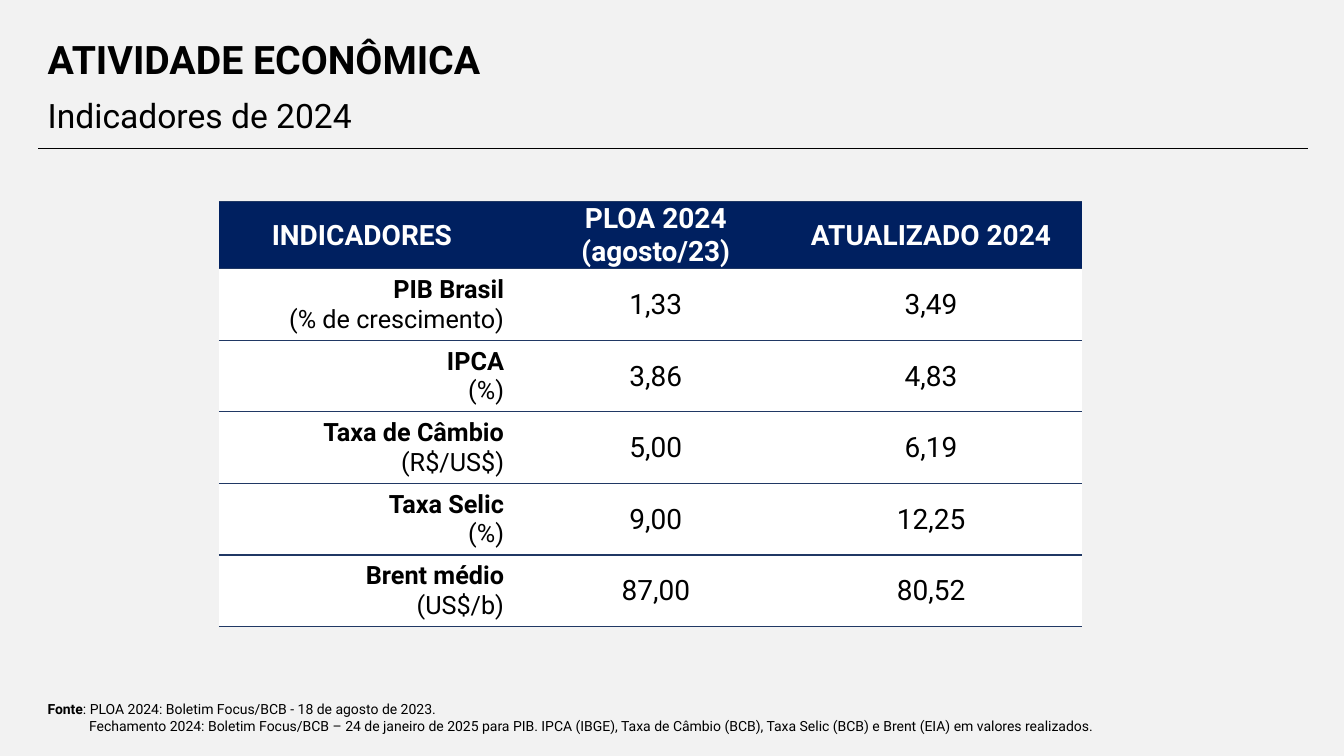
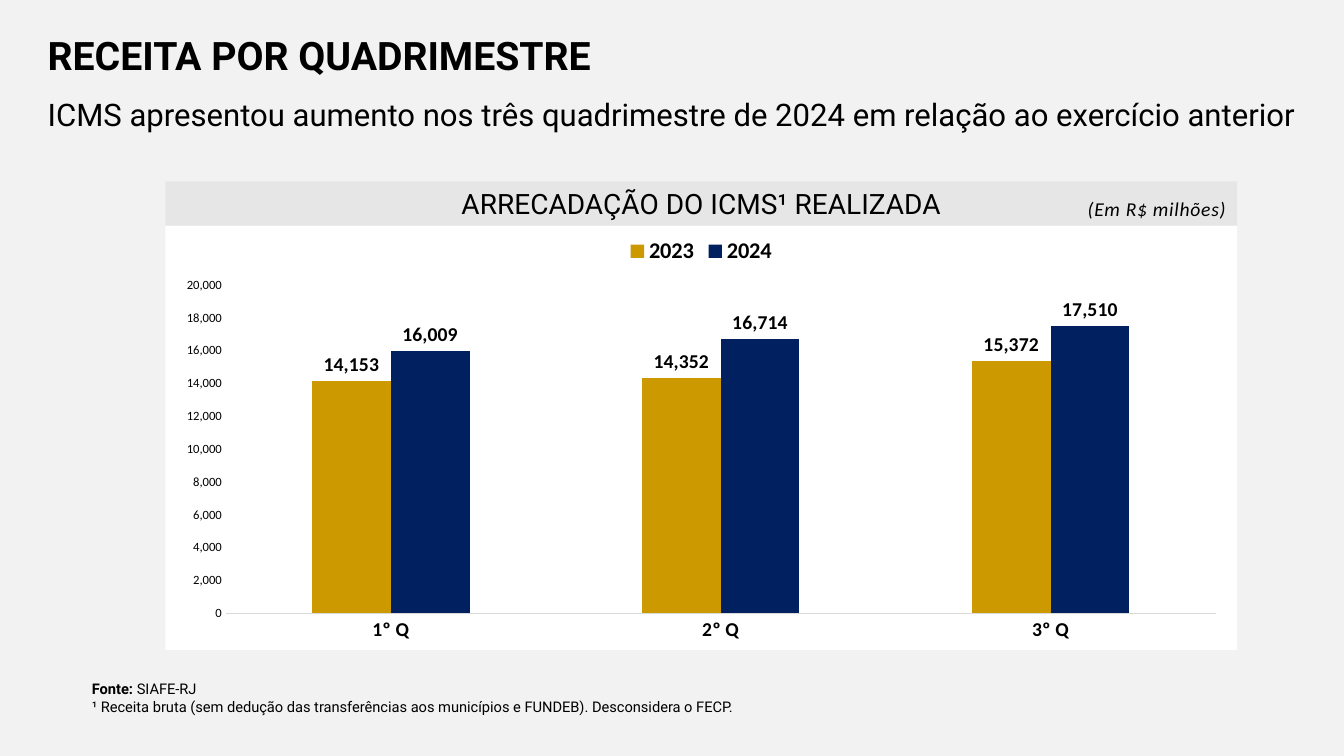
from dataclasses import dataclass
from typing import Optional

from lxml.etree import SubElement
from pptx import Presentation
from pptx.chart.data import CategoryChartData
from pptx.dml.color import RGBColor
from pptx.enum.chart import XL_CHART_TYPE as ChartType
from pptx.enum.chart import XL_LABEL_POSITION as LabelPosition
from pptx.enum.chart import XL_LEGEND_POSITION as LegendPosition
from pptx.enum.chart import XL_TICK_MARK as TickMark
from pptx.enum.shapes import MSO_CONNECTOR as Connector
from pptx.enum.shapes import MSO_SHAPE as Preset
from pptx.enum.text import MSO_ANCHOR as Anchor
from pptx.enum.text import MSO_AUTO_SIZE as AutoSize
from pptx.enum.text import PP_ALIGN as Align
from pptx.oxml.ns import qn
from pptx.util import Inches, Pt

SLIDE_W, SLIDE_H = Inches(13.33), Inches(7.5)
PAPER, BLACK, WHITE = "F2F2F2", "000000", "FFFFFF"
NAVY, RULE_BLUE, GOLD = "002060", "203864", "CC9900"
BAND_GREY, AXIS_GREY = "E7E6E6", "D9D9D9"
HEADING_FONT, CHART_FONT = "Roboto", "Calibri"
MARGIN = 2.8
MILLIONS = "#,##0,,"


@dataclass(frozen=True)
class Area:
    """Percentages of the slide's width and height."""

    left: float
    top: float
    width: float
    height: float

    def emu(self) -> tuple:
        return across(self.left), down(self.top), across(self.width), down(self.height)


@dataclass(frozen=True)
class SourceLine:
    lead: str
    rest: str
    indent: float = 0


@dataclass(frozen=True)
class Indicator:
    name: str
    unit: str
    planned: str
    updated: str


@dataclass(frozen=True)
class YearRevenue:
    year: str
    millions: tuple
    colour: str


INDICATORS = (
    Indicator("PIB Brasil", "(% de crescimento)", "1,33", "3,49"),
    Indicator("IPCA", "(%)", "3,86", "4,83"),
    Indicator("Taxa de Câmbio", "(R$/US$)", "5,00", "6,19"),
    Indicator("Taxa Selic", "(%)", "9,00", "12,25"),
    Indicator("Brent médio", "(US$/b)", "87,00", "80,52"),
)
INDICATOR_HEADINGS = ("INDICADORES", "", "PLOA 2024\n(agosto/23)", "ATUALIZADO 2024", "")
INDICATOR_COLUMNS = (21.3, 1.28, 19.88, 21.08, 0.68)
HEADING_ROW, INDICATOR_ROW = 8.8, 9.47

QUARTERS = ("1º Q", "2º Q", "3º Q")
REVENUES = (
    YearRevenue("2023", (14153, 14352, 15372), GOLD),
    YearRevenue("2024", (16009, 16714, 17510), NAVY),
)


def across(share: float) -> int:
    return round(SLIDE_W * share / 100)


def down(share: float) -> int:
    return round(SLIDE_H * share / 100)


def colour(value: str) -> RGBColor:
    return RGBColor.from_string(value)


def style(font, size: float, bold: bool = False, face: str = HEADING_FONT,
          ink: str = BLACK) -> None:
    font.name, font.size, font.bold = face, Pt(size), bold
    font.color.rgb = colour(ink)


def style_paragraph(paragraph, size: float, bold: bool = False,
                    align: Align = Align.LEFT, spacing: Optional[float] = None,
                    ink: str = BLACK, face: str = HEADING_FONT) -> None:
    paragraph.alignment = align
    if spacing:
        paragraph.line_spacing = spacing
    for run in paragraph.runs:
        style(run.font, size, bold, face, ink)


def fill_heading(placeholder, area: Area, text: str, size: float, bold: bool,
                 spacing: float) -> None:
    placeholder.left, placeholder.top, placeholder.width, placeholder.height = area.emu()
    frame = placeholder.text_frame
    frame.text = text
    frame.auto_size = AutoSize.NONE
    frame.word_wrap = True
    frame.vertical_anchor = Anchor.MIDDLE
    paragraph = frame.paragraphs[0]
    properties = paragraph._p.get_or_add_pPr()
    properties.set("marL", "0")
    properties.set("indent", "0")
    SubElement(properties, qn("a:buNone"))
    paragraph.space_before = Pt(0)
    style_paragraph(paragraph, size, bold, spacing=spacing)


def add_headed_slide(deck, title: str, subtitle: str, title_top: float,
                     subtitle_size: float):
    slide = deck.slides.add_slide(deck.slide_layouts[1])
    fill_heading(slide.shapes.title, Area(MARGIN, title_top, 66.7, 10.5),
                 title, 28, True, 0.9)
    fill_heading(slide.placeholders[1], Area(MARGIN, 10.7, 95.5, 7.9),
                 subtitle, subtitle_size, False, 1.2)
    return slide


def add_source(slide, area: Area, lines: tuple, size: float) -> None:
    frame = slide.shapes.add_textbox(*area.emu()).text_frame
    frame.word_wrap = True
    for position, line in enumerate(lines):
        paragraph = frame.add_paragraph() if position else frame.paragraphs[0]
        paragraph.text = line.lead
        style_paragraph(paragraph, size, True)
        rest = paragraph.add_run()
        rest.text = line.rest
        style(rest.font, size)
        if line.indent:
            paragraph._p.get_or_add_pPr().set("marL", str(across(line.indent)))


def add_panel(slide, area: Area, fill: str):
    panel = slide.shapes.add_shape(Preset.RECTANGLE, *area.emu())
    panel.shadow.inherit = False
    panel.fill.solid()
    panel.fill.fore_color.rgb = colour(fill)
    panel.line.fill.background()
    return panel


def add_rule(slide, left: float, right: float, top: float) -> None:
    rule = slide.shapes.add_connector(Connector.STRAIGHT, across(left), down(top),
                                      across(right), down(top))
    rule.line.color.rgb = colour(BLACK)
    rule.line.width = Pt(0.5)
    SubElement(rule._element.spPr, qn("a:effectLst"))


def add_borders(cell) -> None:
    properties = cell._tc.get_or_add_tcPr()
    for side in ("lnL", "lnR"):
        SubElement(SubElement(properties, qn(f"a:{side}"), w="0"), qn("a:noFill"))
    for side in ("lnT", "lnB"):
        edge = SubElement(properties, qn(f"a:{side}"), w=str(Pt(1)))
        SubElement(SubElement(edge, qn("a:solidFill")), qn("a:srgbClr"), val=RULE_BLUE)


def fill_cell(cell, text: str, fill: str) -> None:
    add_borders(cell)
    cell.fill.solid()
    cell.fill.fore_color.rgb = colour(fill)
    cell.vertical_anchor = Anchor.MIDDLE
    cell.margin_left = cell.margin_right = cell.margin_top = Inches(0.01)
    cell.margin_bottom = 0
    cell.text_frame.text = text


def add_indicator_table(slide, left: float, top: float) -> None:
    height = HEADING_ROW + INDICATOR_ROW * len(INDICATORS)
    area = Area(left, top, sum(INDICATOR_COLUMNS), height)
    table = slide.shapes.add_table(len(INDICATORS) + 1, len(INDICATOR_COLUMNS),
                                   *area.emu()).table
    table.first_row = table.horz_banding = False
    for column, width in zip(table.columns, INDICATOR_COLUMNS):
        column.width = across(width)
    for position, row in enumerate(table.rows):
        row.height = down(INDICATOR_ROW if position else HEADING_ROW)
    for cell, heading in zip(table.rows[0].cells, INDICATOR_HEADINGS):
        fill_cell(cell, heading, NAVY)
        for paragraph in cell.text_frame.paragraphs:
            style_paragraph(paragraph, 20, True, Align.CENTER, ink=WHITE)
    for position, item in enumerate(INDICATORS, start=1):
        label, *values = table.rows[position].cells
        fill_cell(label, f"{item.name}\n{item.unit}", WHITE)
        name, unit = label.text_frame.paragraphs
        style_paragraph(name, 18, True, Align.RIGHT)
        style_paragraph(unit, 18, False, Align.RIGHT)
        for cell, value in zip(values, ("", item.planned, item.updated, "")):
            fill_cell(cell, value, WHITE)
            style_paragraph(cell.text_frame.paragraphs[0], 20, align=Align.CENTER)


def add_revenue_chart(slide, area: Area) -> None:
    data = CategoryChartData(number_format=MILLIONS)
    data.categories = QUARTERS
    for revenue in REVENUES:
        data.add_series(revenue.year, [value * 10**6 for value in revenue.millions])
    chart = slide.shapes.add_chart(ChartType.COLUMN_CLUSTERED, *area.emu(), data).chart
    style(chart.font, 10, face=CHART_FONT)
    chart.has_title = False
    chart.has_legend = True
    chart.legend.position = LegendPosition.TOP
    chart.legend.include_in_layout = False
    style(chart.legend.font, 16, True, CHART_FONT)

    quarters, amounts = chart.category_axis, chart.value_axis
    for axis, size, bold in ((quarters, 14, True), (amounts, 9, False)):
        axis.major_tick_mark = axis.minor_tick_mark = TickMark.NONE
        axis.has_major_gridlines = False
        style(axis.tick_labels.font, size, bold, CHART_FONT)
    quarters.format.line.color.rgb = colour(AXIS_GREY)
    quarters.format.line.width = Pt(0.75)
    amounts.format.line.fill.background()
    amounts.minimum_scale = 0
    amounts.tick_labels.number_format = MILLIONS
    amounts.tick_labels.number_format_is_linked = False

    plot = chart.plots[0]
    plot.gap_width, plot.overlap = 219, 0
    plot.vary_by_categories = False
    for series, revenue in zip(plot.series, REVENUES):
        series.format.fill.solid()
        series.format.fill.fore_color.rgb = colour(revenue.colour)
        labels = series.data_labels
        labels.show_value = True
        labels.position = LabelPosition.OUTSIDE_END
        labels.number_format = MILLIONS
        labels.number_format_is_linked = False
        style(labels.font, 14, True, CHART_FONT)


def build_indicators(deck) -> None:
    slide = add_headed_slide(deck, "ATIVIDADE ECONÔMICA", "Indicadores de 2024", 2.9, 24)
    add_rule(slide, 2.85, 97.35, 19.6)
    add_indicator_table(slide, 16.28, 26.67)
    add_source(slide, Area(MARGIN, 92, 82, 6), (
        SourceLine("Fonte", ": PLOA 2024: Boletim Focus/BCB - 18 de agosto de 2023."),
        SourceLine("", "Fechamento 2024: Boletim Focus/BCB – 24 de janeiro de 2025 para PIB. "
                       "IPCA (IBGE), Taxa de Câmbio (BCB), Taxa Selic (BCB) e Brent (EIA) "
                       "em valores realizados.", 3.1),
    ), 10)


def build_revenue(deck) -> None:
    slide = add_headed_slide(
        deck, "RECEITA POR QUADRIMESTRE",
        "ICMS apresentou aumento nos três quadrimestre de 2024 em relação ao exercício anterior",
        2.4, 22.2)
    band = Area(12.3, 24, 79.74, 5.87)
    chart_area = Area(band.left, band.top + band.height, band.width, 56.1)
    heading = add_panel(slide, band, BAND_GREY).text_frame
    heading.text = "ARRECADAÇÃO DO ICMS¹ REALIZADA"
    style_paragraph(heading.paragraphs[0], 20, align=Align.CENTER)
    add_panel(slide, chart_area, WHITE)
    unit = slide.shapes.add_textbox(*Area(78, 24.8, 13.95, 5.33).emu()).text_frame
    unit.word_wrap = True
    unit.text = "(Em R$ milhões)"
    style_paragraph(unit.paragraphs[0], 14, align=Align.RIGHT, spacing=1.2, face=CHART_FONT)
    unit_run = unit.paragraphs[0].runs[0]
    unit_run.font.italic = True
    unit_run._r.get_or_add_rPr().set("spc", "50")
    add_revenue_chart(slide, chart_area)
    add_source(slide, Area(6.1, 89.3, 90, 6), (
        SourceLine("Fonte: ", "SIAFE-RJ"),
        SourceLine("", "¹ Receita bruta (sem dedução das transferências aos municípios e "
                       "FUNDEB). Desconsidera o FECP."),
    ), 10.5)


def main() -> None:
    deck = Presentation()
    deck.slide_width, deck.slide_height = SLIDE_W, SLIDE_H
    backdrop = deck.slide_master.background.fill
    backdrop.solid()
    backdrop.fore_color.rgb = colour(PAPER)
    build_indicators(deck)
    build_revenue(deck)
    deck.save("out.pptx")


if __name__ == "__main__":
    main()
